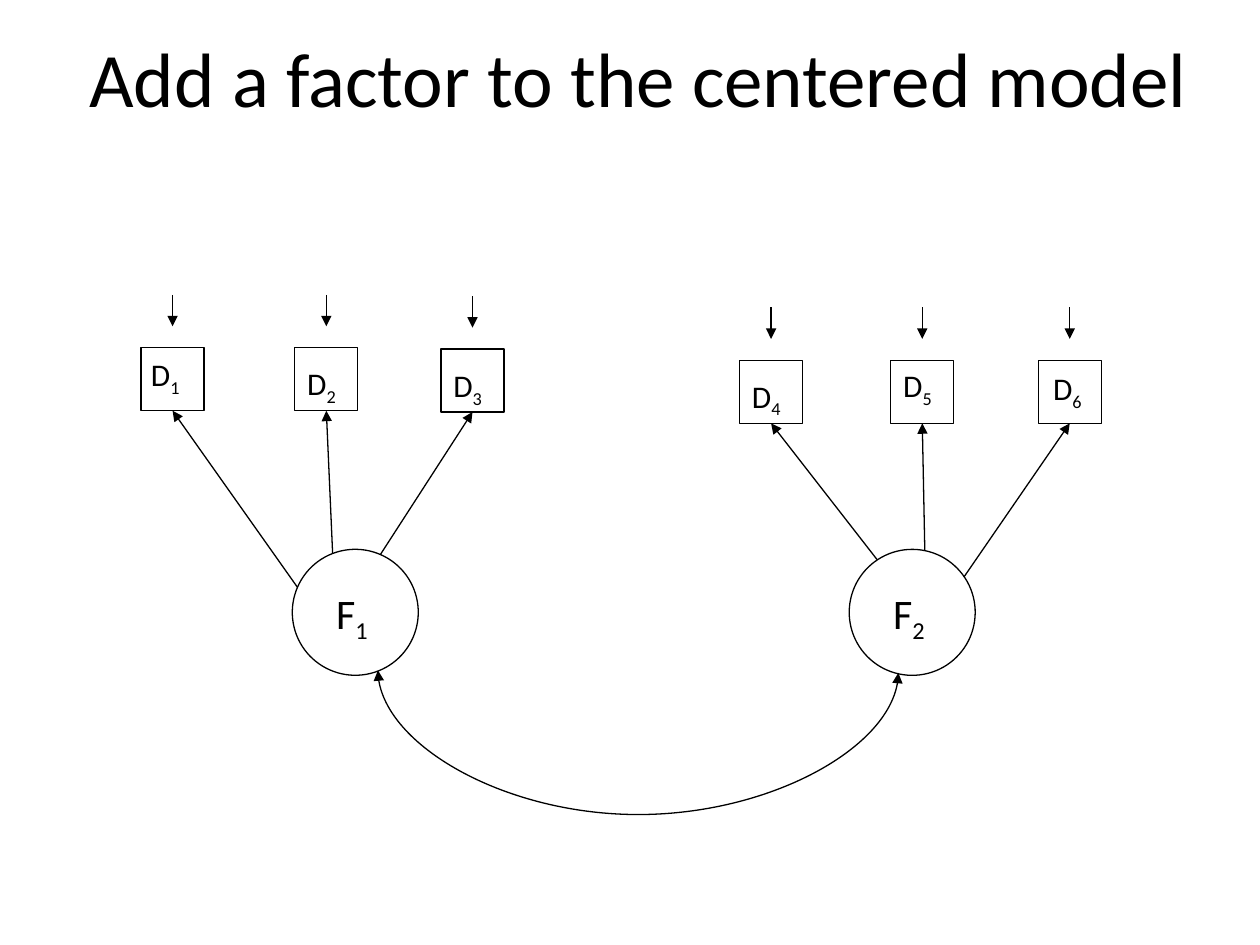
import dataclasses

import pptx
import pptx.dml.color
import pptx.enum.shapes
import pptx.enum.text
import pptx.oxml.ns
import pptx.util
from lxml import etree

SHAPE = pptx.enum.shapes.MSO_SHAPE
CONNECTOR = pptx.enum.shapes.MSO_CONNECTOR
qn = pptx.oxml.ns.qn

# The slide is a grid of 20 columns by 15 rows; one indicator box fills one cell
COLS, ROWS = 20, 15
CELL = pptx.util.Inches(0.5)


@dataclasses.dataclass(frozen=True)
class Theme:
    ink: pptx.dml.color.RGBColor = pptx.dml.color.RGBColor(0, 0, 0)
    font: str = "Calibri"
    title: int = 44
    factor: int = 24
    indicator: int = 18
    line: float = 0.75


THEME = Theme()

# Factor: number, left column, rotation
FACTORS = [(1, 4.64, 23.7), (2, 13.48, 326.9)]
FACTOR_TOP, FACTOR_SIZE = 8.72, 2

# Indicator: left and top of the box, label corner, start of its loading arrow
INDICATORS = [
    ((2.24, 5.52), (2.2, 5.54), (4.72, 9.32)),
    ((4.68, 5.52), (4.68, 5.68), (5.28, 8.78)),
    ((7, 5.54), (7, 5.72), (6.04, 8.8)),
    ((11.74, 5.72), (11.74, 5.88), (13.92, 8.88)),
    ((14.14, 5.72), (14.14, 5.72), (14.68, 8.74)),
    ((16.48, 5.72), (16.52, 5.76), (15.3, 9.16)),
]


def cells(*values):
    return [round(v * CELL) for v in values]


def style_line(s):
    s.line.color.rgb = THEME.ink
    s.line.width = pptx.util.Pt(THEME.line)


def style_run(r, size):
    r.font.name = THEME.font
    r.font.size = pptx.util.Pt(size)
    r.font.color.rgb = THEME.ink


def add_outline(slide, kind, left, top, size, rotation=0):
    s = slide.shapes.add_shape(kind, *cells(left, top, size, size))
    s.shadow.inherit = False
    s.fill.background()
    s.rotation = rotation
    style_line(s)


def add_arrow(slide, start, end, kind=CONNECTOR.STRAIGHT, ends=("tailEnd",)):
    s = slide.shapes.add_connector(kind, *cells(*start, *end))
    style_line(s)
    for tag in ends:
        etree.SubElement(s.line._get_or_add_ln(), qn(f"a:{tag}"), type="triangle")
    etree.SubElement(s._element.spPr, qn("a:effectLst"))
    return s


def add_covariance(slide, start, end, depth):
    """Double-headed curve hanging below two points of nearly equal height."""
    rise, span = end[1] - start[1], end[0] - start[0]
    mid_x, mid_y = (start[0] + end[0]) / 2, (start[1] + end[1]) / 2
    s = add_arrow(slide, (mid_x - rise / 2, mid_y - span / 2),
                  (mid_x + rise / 2, mid_y + span / 2),
                  CONNECTOR.CURVE, ("headEnd", "tailEnd"))
    # Turn the curve on its side and push its bend down to the given depth
    xfrm = s._element.spPr.find(qn("a:xfrm"))
    xfrm.set("rot", str(270 * 60000))
    xfrm.set("flipH", "1")
    guides = s._element.spPr.find(qn("a:prstGeom")).get_or_add_avLst()
    etree.SubElement(guides, qn("a:gd"), name="adj1",
                     fmla=f"val {round(depth / rise * 100000)}")


def add_label(slide, corner, width, height, letter, number, size):
    s = slide.shapes.add_textbox(*cells(*corner, width, height))
    tf = s.text_frame
    tf.word_wrap = False
    tf.auto_size = pptx.enum.text.MSO_AUTO_SIZE.SHAPE_TO_FIT_TEXT
    p = tf.paragraphs[0]
    for text in (letter, str(number)):
        r = p.add_run()
        r.text = text
        style_run(r, size)
    r.font._element.set("baseline", "-25000")


def add_title(slide, text):
    s = slide.shapes.add_textbox(*cells(1.14, 0.32, 18, 1.8))
    tf = s.text_frame
    tf.word_wrap = True
    tf.vertical_anchor = pptx.enum.text.MSO_ANCHOR.MIDDLE
    tf.text = text
    p = tf.paragraphs[0]
    p.alignment = pptx.enum.text.PP_ALIGN.CENTER
    style_run(p.runs[0], THEME.title)


def add_factor(slide, number, left, rotation):
    add_outline(slide, SHAPE.OVAL, left, FACTOR_TOP, FACTOR_SIZE, rotation)
    add_label(slide, (left + 0.5, FACTOR_TOP + 0.5), 1.06, 1, "F", number, THEME.factor)


def add_indicator(slide, number, box, label, loading_start):
    left, top = box
    center = left + 0.5
    add_outline(slide, SHAPE.RECTANGLE, left, top, 1)
    add_arrow(slide, loading_start, (center, top + 1))
    # Error term above the box
    add_arrow(slide, (center, top - 0.84), (center, top - 0.34))
    add_label(slide, label, 0.88, 0.8, "D", number, THEME.indicator)


def main():
    prs = pptx.Presentation()
    prs.slide_width, prs.slide_height = COLS * CELL, ROWS * CELL
    slide = prs.slides.add_slide(prs.slide_layouts[6])

    # Factors and their indicators
    for factor in FACTORS:
        add_factor(slide, *factor)
    for number, indicator in enumerate(INDICATORS, 1):
        add_indicator(slide, number, *indicator)

    # Covariance between the factors
    add_covariance(slide, (6, 10.64), (14.26, 10.68), 2.28)

    add_title(slide, "Add a factor to the centered model")
    prs.save("out.pptx")


if __name__ == "__main__":
    main()
